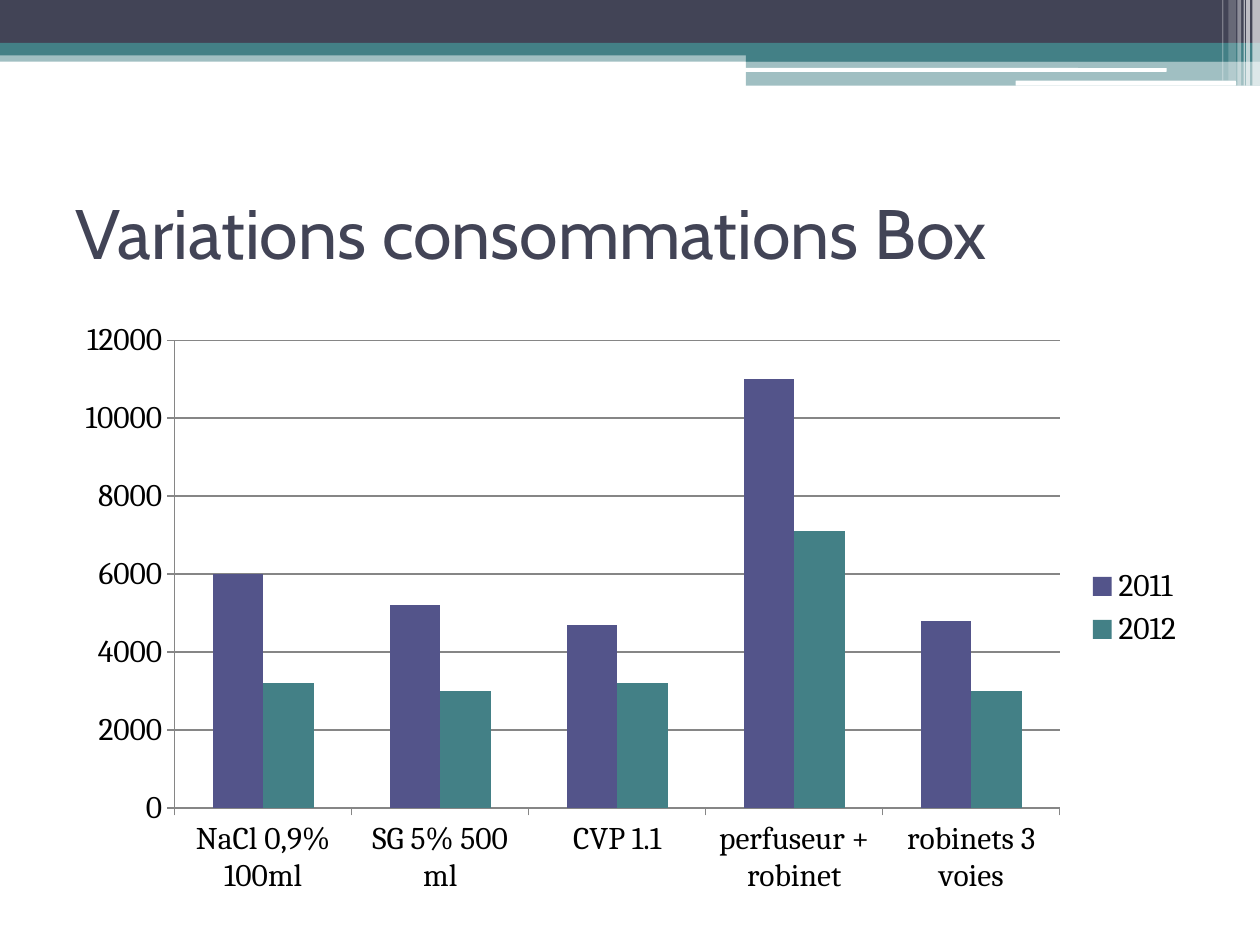
from pptx import Presentation
from pptx.chart.data import CategoryChartData as ChartData
from pptx.dml.color import RGBColor
from pptx.enum.chart import XL_CHART_TYPE as Kind, XL_LEGEND_POSITION as Side, XL_TICK_MARK as Tick
from pptx.enum.shapes import MSO_SHAPE as Shape
from pptx.enum.text import MSO_ANCHOR as Anchor, PP_ALIGN as Align
from pptx.oxml import parse_xml
from pptx.oxml.ns import nsdecls
from pptx.util import Inches, Pt

NAVY, TEAL, WHITE, GRAY = "424456", "438086", "FFFFFF", "868686"
BANDS = [
    (0, 0.4, 10, 0.09, TEAL, 50),
    (0, 0, 10, 0.34, NAVY, 100),
    (0, 0.34, 10, 0.1, TEAL, 100),
    (5.92, 0.39, 4.08, 0.1, TEAL, 100),
    (5.92, 0.48, 4.08, 0.2, TEAL, 50),
]
SLOTS = [(5.91, 0.54, 3.35, 0.03), (8.06, 0.64, 1.75, 0.04)]
STRIPES = [
    (9.94, 0.06, 0.68, 65),
    (9.89, 0.03, 0.68, 65),
    (9.87, 0.01, 0.68, 60),
    (9.82, 0.03, 0.68, 40),
    (9.75, 0.06, 0.64, 20),
    (9.7, 0.01, 0.64, 30),
]
ITEMS = ["NaCl 0,9% 100ml", "SG 5% 500 ml", "CVP 1.1", "perfuseur + robinet", "robinets 3 voies"]
YEARS = [
    ("2011", (6000, 5200, 4700, 11000, 4800), "53548A"),
    ("2012", (3200, 3000, 3200, 7100, 3000), TEAL),
]


def paint(fmt, color):
    fmt.solid()
    fmt.fore_color.rgb = RGBColor.from_string(color)


def style(font, name, size, color):
    font.name, font.size = name, Pt(size)
    font.color.rgb = RGBColor.from_string(color)


def add_bar(slide, box, color, alpha=100, kind=Shape.RECTANGLE):
    bar = slide.shapes.add_shape(kind, *map(Inches, box))
    bar.shadow.inherit = False
    bar.line.fill.background()
    paint(bar.fill, color)
    if alpha < 100:
        tone = bar.fill._xPr.solidFill[0]
        tone.append(parse_xml(f'<a:alpha {nsdecls("a")} val="{alpha * 1000}"/>'))


def add_banner(slide, left, top):
    for x, y, wide, high, color, alpha in BANDS:
        add_bar(slide, (left + x, top + y, wide, high), color, alpha)
    for x, y, wide, high in SLOTS:
        add_bar(slide, (left + x, top + y, wide, high), WHITE, kind=Shape.ROUNDED_RECTANGLE)
    for x, wide, high, alpha in STRIPES:
        add_bar(slide, (left + x, top, wide, high), WHITE, alpha)


def set_title(slide, box, text):
    title = slide.shapes.title
    title.left, title.top, title.width, title.height = map(Inches, box)
    frame = title.text_frame
    frame.text = text
    frame.word_wrap = True
    frame.vertical_anchor = Anchor.MIDDLE
    line = frame.paragraphs[0]
    line.alignment = Align.LEFT
    style(line.font, "Cabin", 40, NAVY)


def add_usage(slide, box):
    data = ChartData(number_format="General")
    data.categories = ITEMS
    for year, counts, _ in YEARS:
        data.add_series(year, counts)
    chart = slide.shapes.add_chart(Kind.COLUMN_CLUSTERED, *map(Inches, box), data).chart
    style(chart.font, "Cambria", 18, "000000")
    chart.has_title = False
    chart.has_legend = True
    chart.legend.position = Side.RIGHT
    chart.legend.include_in_layout = False
    plot = chart.plots[0]
    plot.vary_by_categories = False
    plot.gap_width, plot.overlap = 150, 0
    for series, (_, _, color) in zip(plot.series, YEARS):
        paint(series.format.fill, color)
        series.invert_if_negative = False
    scale = chart.value_axis
    scale.minimum_scale, scale.maximum_scale, scale.major_unit = 0, 12000, 2000
    scale.has_major_gridlines = True
    paint(scale.major_gridlines.format.line.fill, GRAY)
    for axis in (scale, chart.category_axis):
        axis.major_tick_mark = Tick.OUTSIDE
        paint(axis.format.line.fill, GRAY)


def main():
    deck = Presentation()
    deck.slide_width, deck.slide_height = Inches(10), Inches(7.5)
    slide = deck.slides.add_slide(deck.slide_layouts[5])
    add_banner(slide, 0, 0)
    set_title(slide, (0.5, 1.25, 9, 1.17), "Variations consommations Box")
    add_usage(slide, (0.5, 2.46, 9, 4.73))
    deck.save("out.pptx")


if __name__ == "__main__":
    main()
